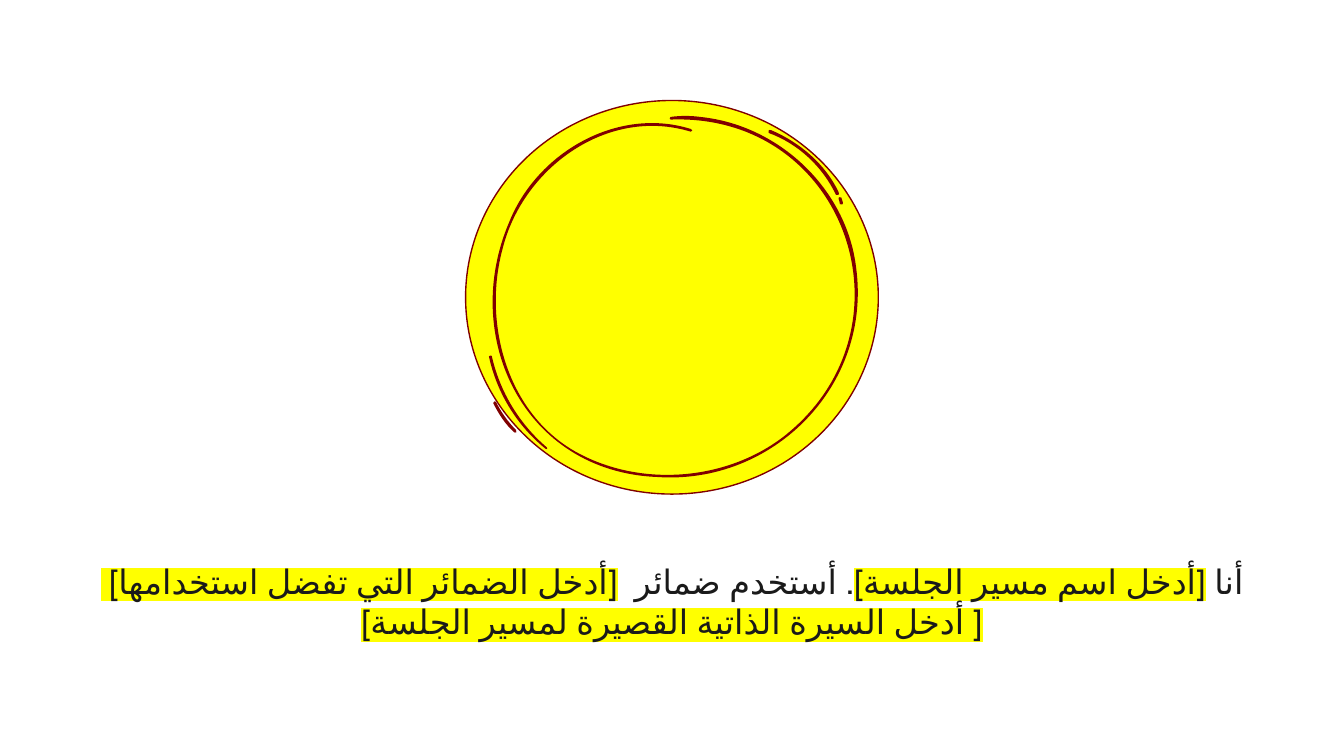
from lxml.etree import SubElement
from pptx import Presentation
from pptx.dml.color import RGBColor
from pptx.enum.lang import MSO_LANGUAGE_ID
from pptx.enum.shapes import MSO_SHAPE
from pptx.enum.text import MSO_ANCHOR, MSO_AUTO_SIZE, PP_ALIGN
from pptx.oxml.ns import qn
from pptx.util import Cm, Pt

YELLOW = RGBColor(0xFF, 0xFF, 0x00)
MAROON = RGBColor(0x80, 0x00, 0x00)
INK = RGBColor(0x1A, 0x1A, 0x1A)
FONT = "Calibri"

# Each paragraph is a list of (text, highlighted)
INTRODUCTION = [
    [
        ("أنا ", False),
        ("[أدخل اسم مسير الجلسة]", True),
        (". أستخدم ضمائر  ", False),
        ("[أدخل الضمائر التي تفضل استخدامها] ", True),
    ],
    [("[ أدخل السيرة الذاتية القصيرة لمسير الجلسة]", True)],
]

# Brush strokes in hundredths of an inch: a start point, then cubic curves
# (control, control, end)
STROKE_UNIT = Cm(2.54) / 100
STROKES = [
    ((637, 199), [
        (630, 141, 580, 93, 521, 87), (514, 86, 506, 86, 499, 87),
        (498, 87, 498, 89, 499, 89), (630, 84, 685, 245, 583, 325),
        (540, 358, 476, 363, 428, 336), (377, 307, 359, 240, 374, 185),
        (389, 125, 452, 79, 514, 98), (515, 98, 516, 96, 514, 96),
        (460, 79, 400, 113, 379, 165), (342, 251, 390, 351, 489, 355),
        (575, 361, 649, 287, 637, 199),
    ]),
    ((407, 333), [
        (387, 316, 372, 292, 366, 265), (366, 264, 363, 265, 364, 266),
        (370, 293, 385, 317, 406, 334), (407, 335, 408, 334, 407, 333),
    ]),
    ((384, 320), [
        (378, 314, 373, 307, 369, 299), (369, 298, 367, 299, 367, 300),
        (371, 308, 376, 316, 383, 322), (384, 323, 385, 321, 384, 320),
    ]),
    ((624, 143), [
        (614, 122, 595, 106, 574, 97), (572, 96, 571, 98, 572, 99),
        (594, 107, 612, 124, 622, 145), (623, 146, 625, 145, 624, 143),
    ]),
    ((627, 150), [
        (627, 149, 626, 148, 626, 147), (625, 146, 623, 147, 624, 148),
        (624, 149, 625, 150, 625, 152), (626, 153, 628, 152, 627, 150),
    ]),
]


def curve_points(start, curve, steps=16):
    """Return points along a cubic Bezier curve, used to find its bounds."""
    controls = (start, curve[:2], curve[2:4], curve[4:])
    points = []
    for step in range(steps + 1):
        t = step / steps
        u = 1 - t
        weights = (u**3, 3 * u * u * t, 3 * u * t * t, t**3)
        points.append(tuple(
            sum(w * point[axis] for w, point in zip(weights, controls))
            for axis in (0, 1)
        ))
    return points


def bend_segments(outline):
    """Turn every three line segments of an outline into one cubic curve."""
    lines = outline.findall(qn("a:lnTo"))
    for first in range(0, len(lines), 3):
        curve = SubElement(outline, qn("a:cubicBezTo"))
        lines[first].addprevious(curve)
        for line in lines[first:first + 3]:
            curve.append(line[0])
            outline.remove(line)


def fit_bounds(stroke, outline, points):
    """Shrink the frame from the control points to the curve itself."""
    xs, ys = zip(*points)
    left, top = round(min(xs) * STROKE_UNIT), round(min(ys) * STROKE_UNIT)
    width = round(max(xs) * STROKE_UNIT) - left
    height = round(max(ys) * STROKE_UNIT) - top
    for point in outline.iter(qn("a:pt")):
        point.set("x", str(int(point.get("x")) + stroke.left - left))
        point.set("y", str(int(point.get("y")) + stroke.top - top))
    outline.set("w", str(width))
    outline.set("h", str(height))
    stroke.left, stroke.top = left, top
    stroke.width, stroke.height = width, height


def add_stroke(shapes, start, curves):
    builder = shapes.build_freeform(*start, scale=STROKE_UNIT ** -1 * STROKE_UNIT)
    corners = [curve[i:i + 2] for curve in curves for i in (0, 2, 4)]
    scaled = [(x * STROKE_UNIT, y * STROKE_UNIT) for x, y in [start] + corners]
    builder = shapes.build_freeform(*scaled[0], scale=1.0)
    builder.add_line_segments(scaled[1:], close=True)
    stroke = builder.convert_to_shape()
    outline = next(stroke._element.iter(qn("a:path")))
    bend_segments(outline)
    starts = [start] + [curve[4:] for curve in curves]
    points = [point for begin, curve in zip(starts, curves)
              for point in curve_points(begin, curve)]
    fit_bounds(stroke, outline, points)
    stroke.fill.solid()
    stroke.fill.fore_color.rgb = MAROON
    stroke.line.fill.background()
    stroke.shadow.inherit = False


def add_run(paragraph, text, size=18, color=INK, highlight=None):
    run = paragraph.add_run()
    run.text = text
    run.font.size = Pt(size)
    run.font.language_id = MSO_LANGUAGE_ID.ARABIC
    run.font.color.rgb = color
    if highlight is not None:
        marker = SubElement(run.font._element, qn("a:highlight"))
        SubElement(marker, qn("a:srgbClr"), val=str(highlight))
    run.font.name = FONT


def main():
    presentation = Presentation()
    presentation.slide_width, presentation.slide_height = Cm(25.4), Cm(14.29)
    slide = presentation.slides.add_slide(presentation.slide_layouts[0])
    title = slide.shapes.title._element
    title.getparent().remove(title)

    introduction = slide.placeholders[1]
    introduction.left, introduction.top = Cm(1.17), Cm(9.17)
    introduction.width, introduction.height = Cm(23.06), Cm(4.39)
    frame = introduction.text_frame
    frame.word_wrap = True
    frame.auto_size = MSO_AUTO_SIZE.NONE
    frame.vertical_anchor = MSO_ANCHOR.MIDDLE
    frame.margin_left = frame.margin_right = Cm(0.25)
    frame.margin_top = frame.margin_bottom = Cm(0.25)
    for index, parts in enumerate(INTRODUCTION):
        paragraph = frame.add_paragraph() if index else frame.paragraphs[0]
        paragraph.alignment = PP_ALIGN.CENTER
        paragraph.space_before = Pt(0)
        paragraph._p.get_or_add_pPr().set("rtl", "1")
        for text, highlighted in parts:
            add_run(paragraph, text, highlight=YELLOW if highlighted else None)

    disc = slide.shapes.add_shape(
        MSO_SHAPE.OVAL, Cm(8.8), Cm(1.9), Cm(7.8), Cm(7.44))
    disc.fill.solid()
    disc.fill.fore_color.rgb = YELLOW
    disc.line.color.rgb = MAROON
    disc.line.width = Pt(0.75)
    disc.shadow.inherit = False

    ring = slide.shapes.add_group_shape()
    for start, curves in STROKES:
        add_stroke(ring.shapes, start, curves)

    presentation.save("out.pptx")


if __name__ == "__main__":
    main()
